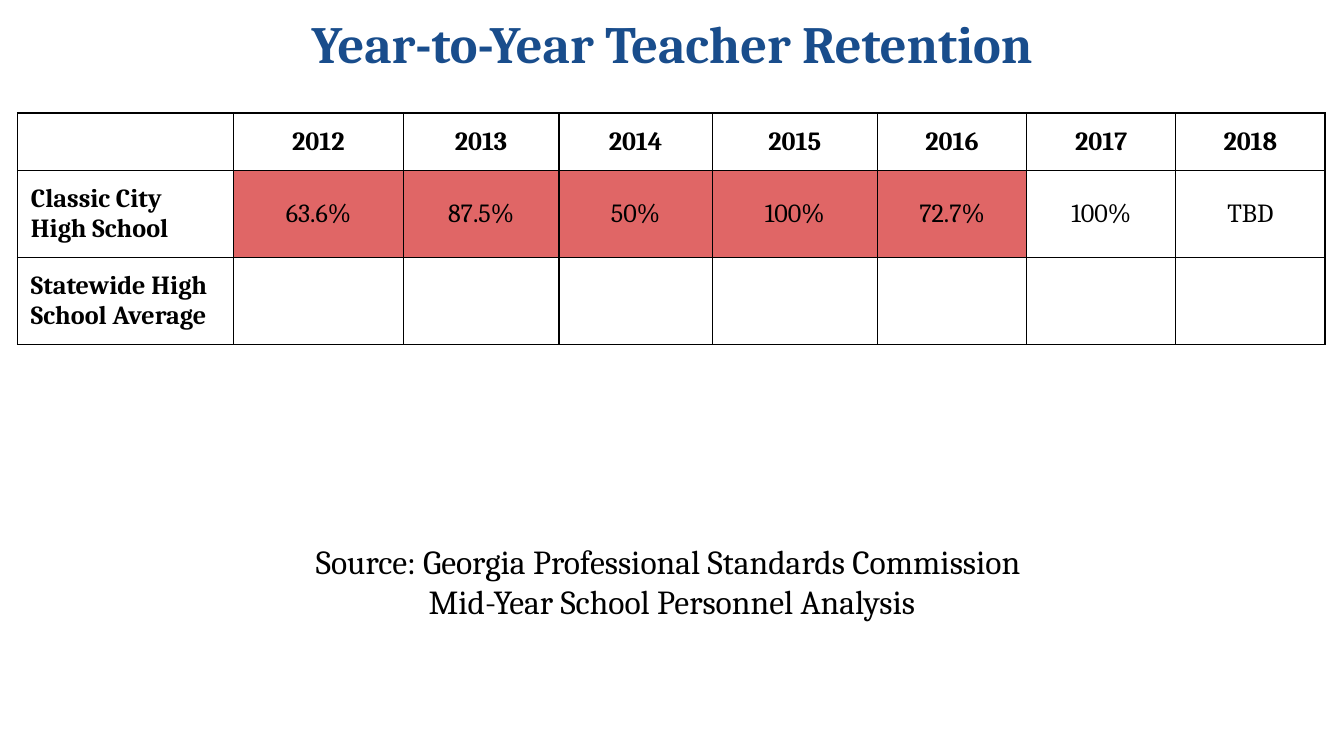
"""Build the year-to-year teacher retention slide."""
from dataclasses import dataclass

from pptx import Presentation
from pptx.dml.color import RGBColor
from pptx.enum.text import MSO_ANCHOR as Anchor, PP_ALIGN as Align
from pptx.oxml.ns import qn
from pptx.util import Inches, Pt
from lxml.etree import SubElement

TITLE = "Year-to-Year Teacher Retention"
ROWS = [
    ["", "2012", "2013", "2014", "2015", "2016", "2017", "2018"],
    ["Classic City High School", "63.6%", "87.5%", "50%", "100%", "72.7%", "100%", "TBD"],
    ["Statewide High School Average"] + [""] * 7,
]
HIGHLIGHTED = {(1, column) for column in range(1, 6)}
SOURCE = "Source: Georgia Professional Standards Commission \nMid-Year School Personnel Analysis"

COLUMN_WIDTHS = [1.61, 1.26, 1.16, 1.14, 1.23, 1.11, 1.11, 1.11]
ROW_HEIGHTS = [0.43, 0.44, 0.44]
TABLE_HEIGHT = 1.77


@dataclass(frozen=True)
class Theme:
    font: str = "Cambria"
    title_color: str = "194D8C"
    text_color: str = "000000"
    border_color: str = "000000"
    highlight: str = "E06666"
    title_size: int = 28
    source_size: int = 18
    table_size: int = 14
    border_width: float = 0.75
    inset: float = 0.1


THEME = Theme()


def format_text(frame, size, color, bold=False, align=Align.CENTER):
    for paragraph in frame.paragraphs:
        paragraph.alignment = align
        for run in paragraph.runs:
            run.font.name = THEME.font
            run.font.size = Pt(size)
            run.font.bold = bold
            run.font.color.rgb = RGBColor.from_string(color)


def set_insets(target):
    for side in ("left", "right", "top", "bottom"):
        setattr(target, f"margin_{side}", Inches(THEME.inset))
    target.vertical_anchor = Anchor.MIDDLE


def fill_text_box(shape, text, size, color, bold=False):
    frame = shape.text_frame
    frame.word_wrap = True
    set_insets(frame)
    frame.text = text
    format_text(frame, size, color, bold)


def add_borders(cell):
    properties = cell._tc.get_or_add_tcPr()
    for side in ("lnL", "lnR", "lnT", "lnB"):
        line = SubElement(properties, qn(f"a:{side}"), w=str(Pt(THEME.border_width)))
        fill = SubElement(line, qn("a:solidFill"))
        SubElement(fill, qn("a:srgbClr"), val=THEME.border_color)


def format_cell(cell, text, row, column):
    add_borders(cell)
    if (row, column) in HIGHLIGHTED:
        cell.fill.solid()
        cell.fill.fore_color.rgb = RGBColor.from_string(THEME.highlight)
    else:
        cell.fill.background()
    if text:
        set_insets(cell)
        cell.text = text
        format_text(
            cell.text_frame,
            THEME.table_size,
            THEME.text_color,
            bold=row == 0 or column == 0,
            align=Align.LEFT if column == 0 else Align.CENTER,
        )


def add_retention_table(slide):
    table_frame = slide.shapes.add_table(
        len(ROWS), len(COLUMN_WIDTHS), Inches(0.13), Inches(0.84),
        Inches(sum(COLUMN_WIDTHS)), Inches(TABLE_HEIGHT),
    )
    table = table_frame.table
    table.first_row = table.horz_banding = False
    for column, width in zip(table.columns, COLUMN_WIDTHS):
        column.width = Inches(width)
    for row, height in zip(table.rows, ROW_HEIGHTS):
        row.height = Inches(height)
    table_frame.height = Inches(TABLE_HEIGHT)
    for row, texts in enumerate(ROWS):
        for column, text in enumerate(texts):
            format_cell(table.cell(row, column), text, row, column)


def main():
    presentation = Presentation()
    presentation.slide_width = Inches(10)
    presentation.slide_height = presentation.slide_width * 9 // 16
    slide = presentation.slides.add_slide(presentation.slide_layouts[5])

    title = slide.shapes.title
    title.left, title.top = Inches(0), Inches(0)
    title.width, title.height = Inches(10), Inches(0.63)
    fill_text_box(title, TITLE, THEME.title_size, THEME.title_color, bold=True)

    add_retention_table(slide)

    source = slide.shapes.add_textbox(Inches(0.23), Inches(3.73), Inches(9.54), Inches(1.19))
    fill_text_box(source, SOURCE, THEME.source_size, THEME.text_color)

    presentation.save("out.pptx")


if __name__ == "__main__":
    main()
